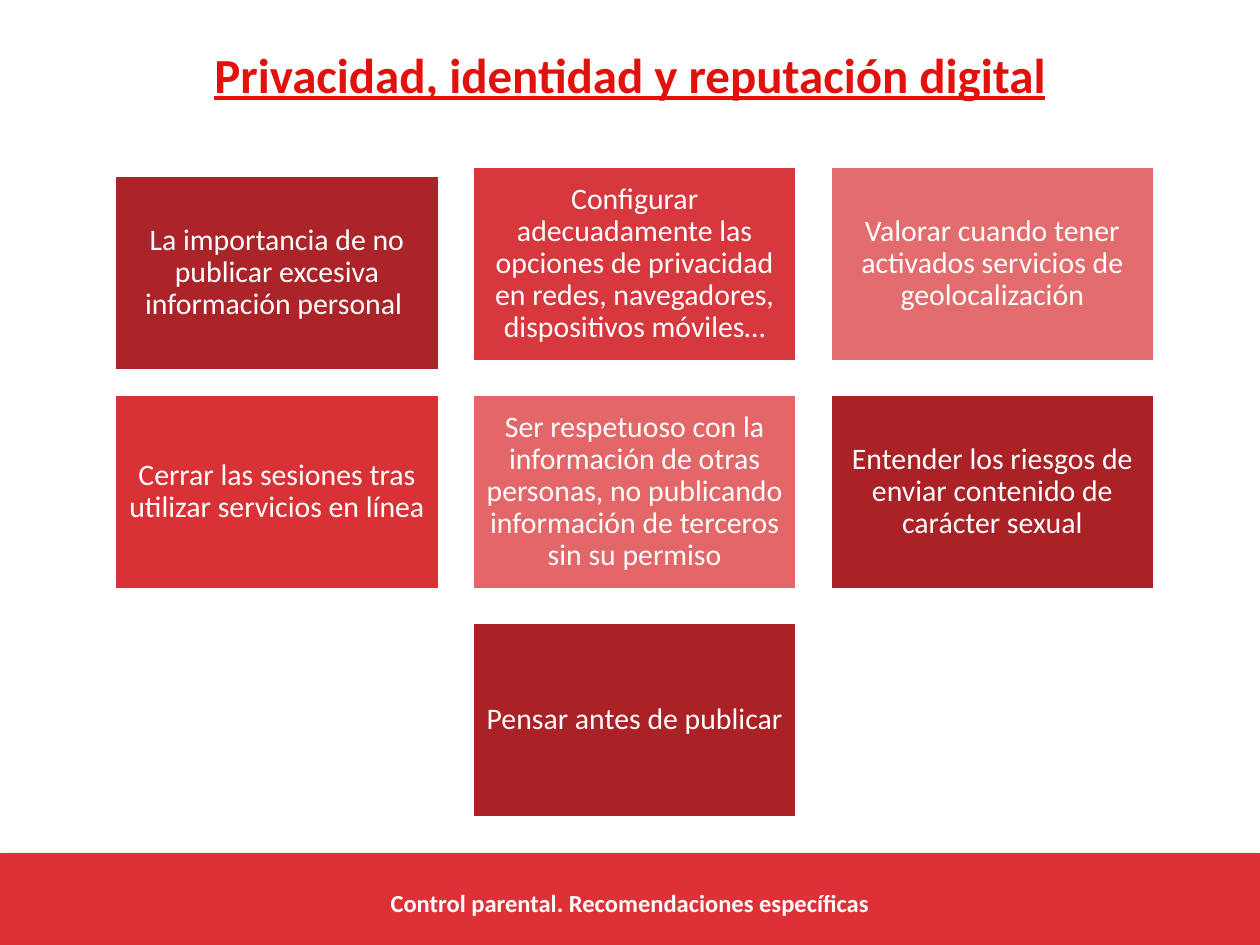
from pptx import Presentation
from pptx.dml.color import RGBColor
from pptx.enum.shapes import MSO_SHAPE
from pptx.enum.text import MSO_ANCHOR, MSO_AUTO_SIZE, PP_ALIGN
from pptx.oxml import parse_xml
from pptx.oxml.ns import nsdecls
from pptx.util import Cm, Pt

FONT = "Calibri"
WHITE = RGBColor(0xFF, 0xFF, 0xFF)
TITLE_RED = RGBColor(0xE1, 0x12, 0x0D)
BAND_RED = RGBColor(0xDD, 0x31, 0x37)
DARK_RED = RGBColor(0xAA, 0x21, 0x26)
FIRST_RED = RGBColor(0xAB, 0x24, 0x29)
MID_RED = RGBColor(0xD6, 0x38, 0x3D)
BRIGHT_RED = RGBColor(0xD8, 0x32, 0x36)
PINK = RGBColor(0xE2, 0x6C, 0x6E)
ROSE = RGBColor(0xE3, 0x66, 0x69)

# Card grid, in centimetres
GRID_LEFT, GRID_TOP = 2.31, 3.35
CARD_WIDTH, CARD_HEIGHT = 6.55, 3.94
COLUMN_STEP, ROW_STEP = 7.21, 4.6
FIRST_CARD_DROP = 0.18

# Column, row, fill, text
CARDS = [
    (0, 0, FIRST_RED, "La importancia de no publicar excesiva información personal "),
    (1, 0, MID_RED, "Configurar adecuadamente las opciones de privacidad en redes, "
                    "navegadores, dispositivos móviles…"),
    (2, 0, PINK, "Valorar cuando tener activados servicios de geolocalización"),
    (0, 1, BRIGHT_RED, "Cerrar las sesiones tras utilizar servicios en línea"),
    (1, 1, ROSE, "Ser respetuoso con la información de otras personas, no publicando "
                 "información de terceros sin su permiso"),
    (2, 1, DARK_RED, "Entender los riesgos de enviar contenido de carácter sexual"),
    (1, 2, DARK_RED, "Pensar antes de publicar"),
]


def write_text(shape, text, size, color=WHITE, bold=False, underline=False,
               anchor=MSO_ANCHOR.TOP, line_spacing=1.0, inset=None):
    """Fill a shape with one centred, formatted paragraph without a bullet."""
    frame = shape.text_frame
    frame.word_wrap = True
    frame.auto_size = MSO_AUTO_SIZE.NONE
    frame.vertical_anchor = anchor
    if inset is not None:
        frame.margin_left = frame.margin_right = inset
        frame.margin_top = frame.margin_bottom = inset
    paragraph = frame.paragraphs[0]
    properties = paragraph._p.get_or_add_pPr()
    properties.set("marL", "0")
    properties.set("indent", "0")
    properties.append(parse_xml(f"<a:buNone {nsdecls('a')}/>"))
    paragraph.alignment = PP_ALIGN.CENTER
    paragraph.line_spacing = line_spacing
    paragraph.space_before = Pt(0)
    run = paragraph.add_run()
    run.text = text
    font = run.font
    font.name, font.size, font.bold, font.underline = FONT, Pt(size), bold, underline
    font.color.rgb = color


def place(shape, left, top, width, height):
    shape.left, shape.top = Cm(left), Cm(top)
    shape.width, shape.height = Cm(width), Cm(height)


def add_rectangle(slide, left, top, width, height, fill):
    shape = slide.shapes.add_shape(
        MSO_SHAPE.RECTANGLE, Cm(left), Cm(top), Cm(width), Cm(height))
    shape.shadow.inherit = False
    shape.fill.solid()
    shape.fill.fore_color.rgb = fill
    return shape


def add_band(slide):
    """Add the footer band with a soft shadow, behind the placeholders."""
    band = add_rectangle(slide, 0, 17.2, 25.4, 1.93, BAND_RED)
    band.line.fill.background()
    band._element.spPr.find("{*}effectLst").append(parse_xml(
        f'<a:outerShdw {nsdecls("a")} blurRad="40000" dist="23000" dir="5400000" '
        'rotWithShape="0"><a:srgbClr val="000000"><a:alpha val="35000"/></a:srgbClr>'
        '</a:outerShdw>'))
    slide.shapes._spTree.insert(2, band._element)


def add_card(slide, column, row, fill, text):
    drop = FIRST_CARD_DROP if (column, row) == (0, 0) else 0
    card = add_rectangle(slide, GRID_LEFT + column * COLUMN_STEP,
                         GRID_TOP + row * ROW_STEP + drop,
                         CARD_WIDTH, CARD_HEIGHT, fill)
    card.line.color.rgb = WHITE
    card.line.width = Pt(2)
    write_text(card, text, 17, anchor=MSO_ANCHOR.MIDDLE, line_spacing=0.9,
               inset=Cm(0.18))


def main():
    presentation = Presentation()
    presentation.slide_width, presentation.slide_height = Cm(25.4), Cm(19.05)
    slide = presentation.slides.add_slide(presentation.slide_layouts[1])

    # Footer band
    add_band(slide)

    # Title and footer text
    title, footer = slide.shapes.title, slide.placeholders[1]
    place(title, 1.27, 0.76, 22.86, 1.83)
    write_text(title, "Privacidad, identidad y reputación digital", 28,
               color=TITLE_RED, bold=True, underline=True)
    place(footer, 1.27, 17.78, 22.86, 0.79)
    write_text(footer, "Control parental. Recomendaciones específicas", 14, bold=True)

    # Recommendation cards
    for card in CARDS:
        add_card(slide, *card)

    presentation.save("out.pptx")


if __name__ == "__main__":
    main()
